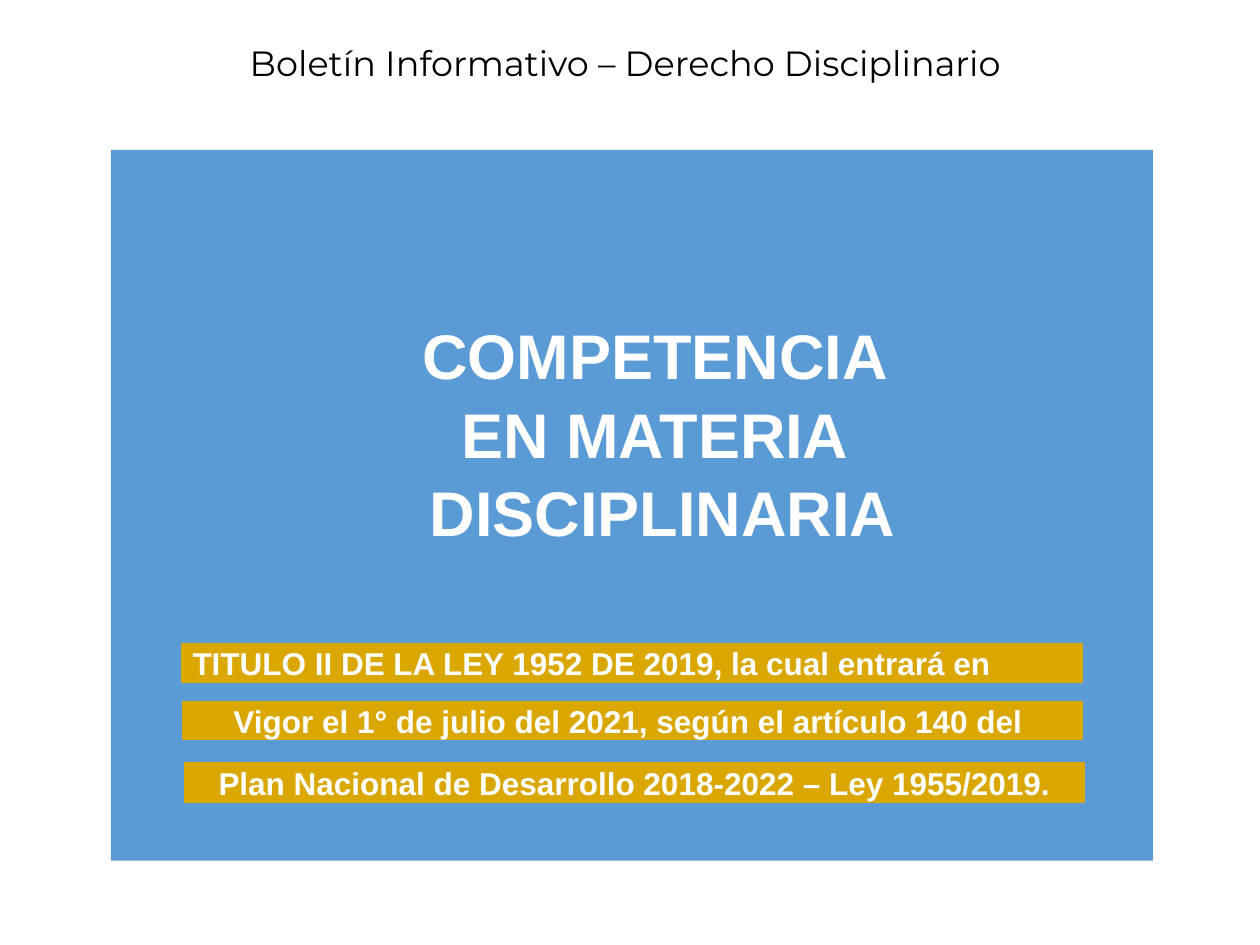
from pptx import Presentation
from pptx.dml.color import RGBColor
from pptx.enum.shapes import MSO_SHAPE
from pptx.enum.text import MSO_ANCHOR, PP_ALIGN
from pptx.util import Inches, Pt

COLORS = {"blue": "5B9BD5", "gold": "DAA600", "white": "FFFFFF", "black": "000000"}


def add_rect(s, left, top, width, height, fill):
    sp = s.shapes.add_shape(MSO_SHAPE.RECTANGLE, Inches(left), Inches(top),
                            Inches(width), Inches(height))
    sp.shadow.inherit = False
    sp.fill.solid()
    sp.fill.fore_color.rgb = RGBColor.from_string(COLORS[fill])
    return sp


def style(p, font, size, color, bold=False, align=PP_ALIGN.CENTER, margin=0, indent=0):
    p.alignment = align
    pPr = p._p.get_or_add_pPr()
    pPr.set("marL", str(Inches(margin)))
    pPr.set("indent", str(Inches(indent)))
    for r in p.runs:
        r.font.name = font
        r.font.size = Pt(size)
        r.font.bold = bold
        r.font.color.rgb = RGBColor.from_string(COLORS[color])


prs = Presentation()
prs.slide_width, prs.slide_height = Inches(10), Inches(7.5)
s = prs.slides.add_slide(prs.slide_layouts[6])

# Bulletin title
tf = s.shapes.add_textbox(0, Inches(0.28), prs.slide_width, Inches(0.47)).text_frame
tf.word_wrap = True
tf.vertical_anchor = MSO_ANCHOR.MIDDLE
tf.text = "Boletín Informativo – Derecho Disciplinario "
tf.paragraphs[0].line_spacing = 0.9
style(tf.paragraphs[0], "Montserrat", 20, "black")

# Blue panel, with its heading raised above the middle
panel = add_rect(s, 0.88, 1.19, 8.27, 5.64, "blue")
panel.line.fill.background()
tf = panel.text_frame
tf.vertical_anchor = MSO_ANCHOR.MIDDLE
tf.margin_bottom = Inches(1.22)
tf.text = "COMPETENCIA \nEN MATERIA \nDISCIPLINARIA"
for p in tf.paragraphs:
    p.line_spacing = 1.04
    style(p, "Arial", 36, "white", bold=True, margin=0.49)

# Gold bands: left, top, width, height, text, alignment, margin, indent
bands = [
    (1.43, 5.10, 7.17, 0.33, "TITULO II DE LA LEY 1952 DE 2019, la cual entrará en",
     PP_ALIGN.LEFT, 0.49, -0.49),
    (1.44, 5.56, 7.16, 0.32, "Vigor el 1° de julio del 2021, según el artículo 140 del ",
     PP_ALIGN.CENTER, 0, 0),
    (1.45, 6.04, 7.17, 0.34, "Plan Nacional de Desarrollo 2018-2022 – Ley 1955/2019.",
     PP_ALIGN.CENTER, 0, 0),
]
for left, top, width, height, text, align, margin, indent in bands:
    sp = add_rect(s, left, top, width, height, "gold")
    sp.line.color.rgb = RGBColor.from_string(COLORS["blue"])
    sp.line.width = Pt(1)
    tf = sp.text_frame
    tf.vertical_anchor = MSO_ANCHOR.MIDDLE
    tf.text = text
    style(tf.paragraphs[0], "Arial", 18, "white", bold=True,
          align=align, margin=margin, indent=indent)

prs.save("out.pptx")
